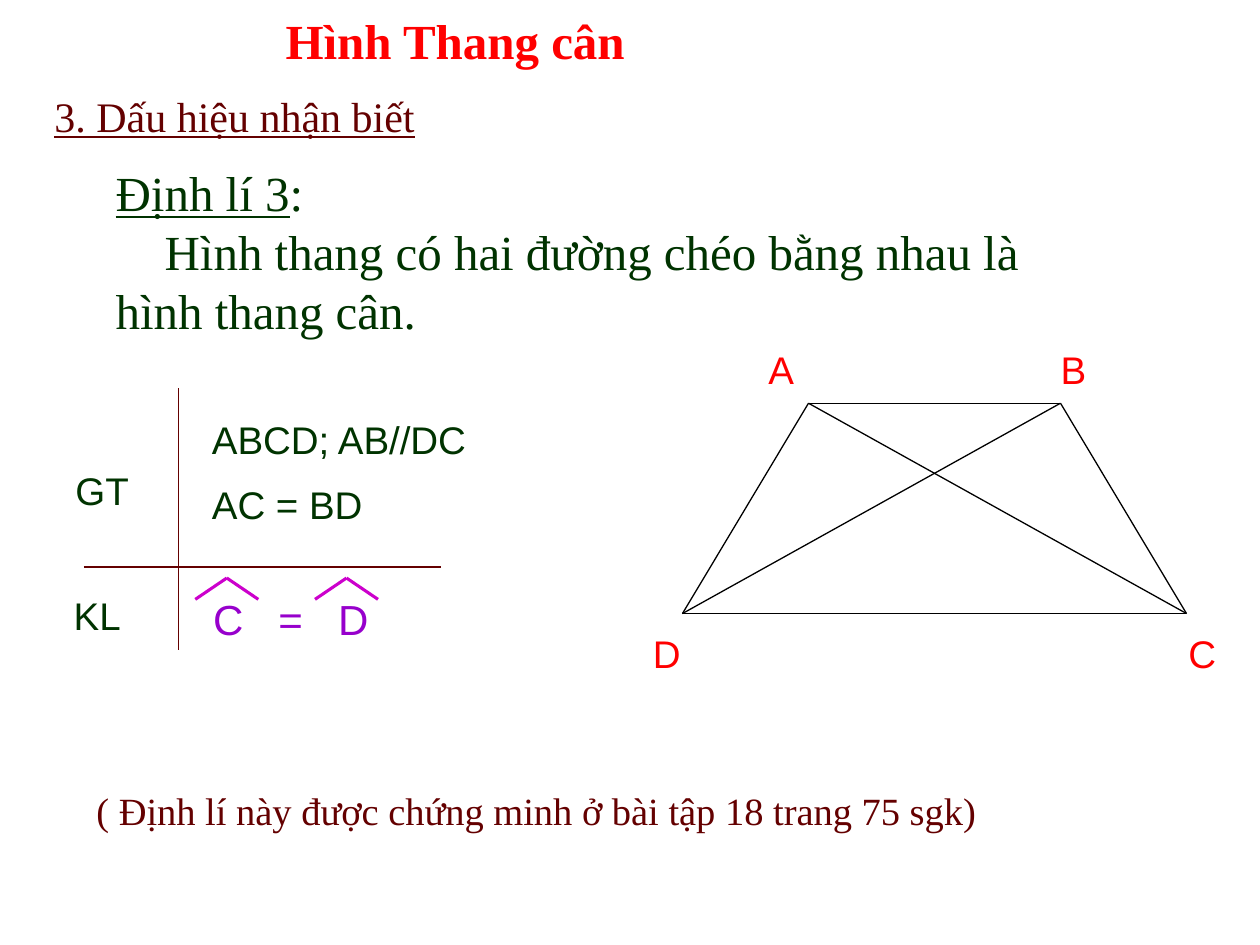
from itertools import combinations
from pptx import Presentation
from pptx.dml.color import RGBColor
from pptx.enum.shapes import MSO_CONNECTOR
from pptx.enum.text import MSO_ANCHOR, MSO_AUTO_SIZE, PP_ALIGN
from pptx.oxml.ns import qn
from pptx.util import Pt
from lxml import etree

STRAIGHT = MSO_CONNECTOR.STRAIGHT
TOP = MSO_ANCHOR.TOP
NO_AUTOSIZE = MSO_AUTO_SIZE.NONE
LEFT = PP_ALIGN.LEFT

THEME = {
    "serif": "Times New Roman", "sans": "Arial",
    "red": "FF0000", "maroon": "640000", "green": "003300",
    "violet": "9700CC", "magenta": "CC00CC", "black": "000000",
    "large": 28, "medium": 24, "small": 22,
    "thin": 0.75, "thick": 1.75,
}

# Content: text, box (left, top, width, height), font, size, colour
TITLE = ("Hình Thang cân", (156, 2.2, 430.5, 41))
LABELS = [
    (["3. Dấu hiệu nhận biết"], (24, 48, 270, 36), "serif", "medium", "maroon"),
    (["GT"], (36, 263.5, 48, 34), "sans", "small", "green"),
    (["KL"], (35, 334.5, 48, 34), "sans", "small", "green"),
    (["ABCD; AB//DC", "AC = BD"], (114, 234, 162, 73.5), "sans", "small", "green"),
    (["C\t=\tD"], (114.7, 335.5, 198, 36), "sans", "medium", "violet"),
    (["( Định lí này được chứng minh ở bài tập 18 trang 75 sgk)"],
     (48, 446.4, 600, 34), "serif", "small", "maroon"),
]
THEOREM_HEAD = "Định lí 3"
THEOREM = "Hình thang có hai đường chéo bằng nhau là hình thang cân."
THEOREM_BOX = (59, 89.3, 583, 143)
EQUATION_TABS = (37.3, 71.4)

VERTICES = {"A": (462, 230.4), "B": (606, 230.4),
            "C": (678, 350.6), "D": (390, 350.6)}
VERTEX_BOXES = {"A": (432, 194.4, 48, 34), "B": (599, 194.4, 66, 34),
                "C": (672, 356.4, 36, 34), "D": (366, 356.4, 54, 34)}
TABLE_LINES = [((102, 222), (102, 371.5)), ((48, 324), (252, 324))]
HAT_PEAKS = [129.6, 198]
HAT_TOP, HAT_HALF_WIDTH, HAT_HEIGHT = 330.3, 18, 12.2


def add_run(paragraph, text, font, size, color, bold=False, underline=False):
    run = paragraph.add_run()
    run.text = text
    run.font.name = THEME[font]
    run.font.size = Pt(THEME[size])
    run.font.color.rgb = RGBColor.from_string(THEME[color])
    run.font.bold = bold
    run.font.underline = underline


def place(shape, box):
    shape.left, shape.top, shape.width, shape.height = map(Pt, box)
    frame = shape.text_frame
    frame.word_wrap = True
    frame.auto_size = NO_AUTOSIZE
    frame.vertical_anchor = TOP
    return frame


def add_box(slide, box):
    return place(slide.shapes.add_textbox(0, 0, 0, 0), box)


def add_label(slide, lines, box, font, size, color, underline=False):
    frame = add_box(slide, box)
    for index, line in enumerate(lines):
        paragraph = frame.add_paragraph() if index else frame.paragraphs[0]
        if index:
            paragraph.space_before = Pt(THEME[size] / 2)
        add_run(paragraph, line, font, size, color, underline=underline)
    return frame


def add_line(slide, start, end, color, width):
    line = slide.shapes.add_connector(STRAIGHT, *map(Pt, (*start, *end)))
    line.line.color.rgb = RGBColor.from_string(THEME[color])
    line.line.width = Pt(THEME[width])
    etree.SubElement(line._element.spPr, qn("a:effectLst"))


def set_tabs(paragraph, positions):
    tab_list = etree.SubElement(paragraph._p.get_or_add_pPr(), qn("a:tabLst"))
    for position in positions:
        etree.SubElement(tab_list, qn("a:tab"), pos=str(Pt(position)), algn="l")


def main():
    presentation = Presentation()
    presentation.slide_width, presentation.slide_height = Pt(720), Pt(540)
    slide = presentation.slides.add_slide(presentation.slide_layouts[5])

    # Title
    text, box = TITLE
    paragraph = place(slide.shapes.title, box).paragraphs[0]
    paragraph.alignment = LEFT
    add_run(paragraph, text, "serif", "large", "red", bold=True)

    # Heading, given and conclusion, closing remark
    for label in LABELS:
        frame = add_label(slide, *label, underline=label is LABELS[0])
        if "\t" in label[0][0]:
            set_tabs(frame.paragraphs[0], EQUATION_TABS)

    # Theorem
    frame = add_box(slide, THEOREM_BOX)
    head = frame.paragraphs[0]
    add_run(head, THEOREM_HEAD, "serif", "large", "green", underline=True)
    add_run(head, ":", "serif", "large", "green")
    body = frame.add_paragraph()
    body._p.get_or_add_pPr().set("indent", str(Pt(THEME["large"])))
    add_run(body, THEOREM, "serif", "large", "green")

    # Cross of the given/conclusion table
    for start, end in TABLE_LINES:
        add_line(slide, start, end, "maroon", "thin")

    # Angle hats
    for peak in HAT_PEAKS:
        for side in (-HAT_HALF_WIDTH, HAT_HALF_WIDTH):
            add_line(slide, (peak, HAT_TOP), (peak + side, HAT_TOP + HAT_HEIGHT),
                     "magenta", "thick")

    # Trapezoid: every pair of vertices is a side or a diagonal
    for start, end in combinations(VERTICES.values(), 2):
        add_line(slide, start, end, "black", "thin")
    for name, box in VERTEX_BOXES.items():
        add_label(slide, [name], box, "sans", "small", "red")

    presentation.save("out.pptx")


if __name__ == "__main__":
    main()
